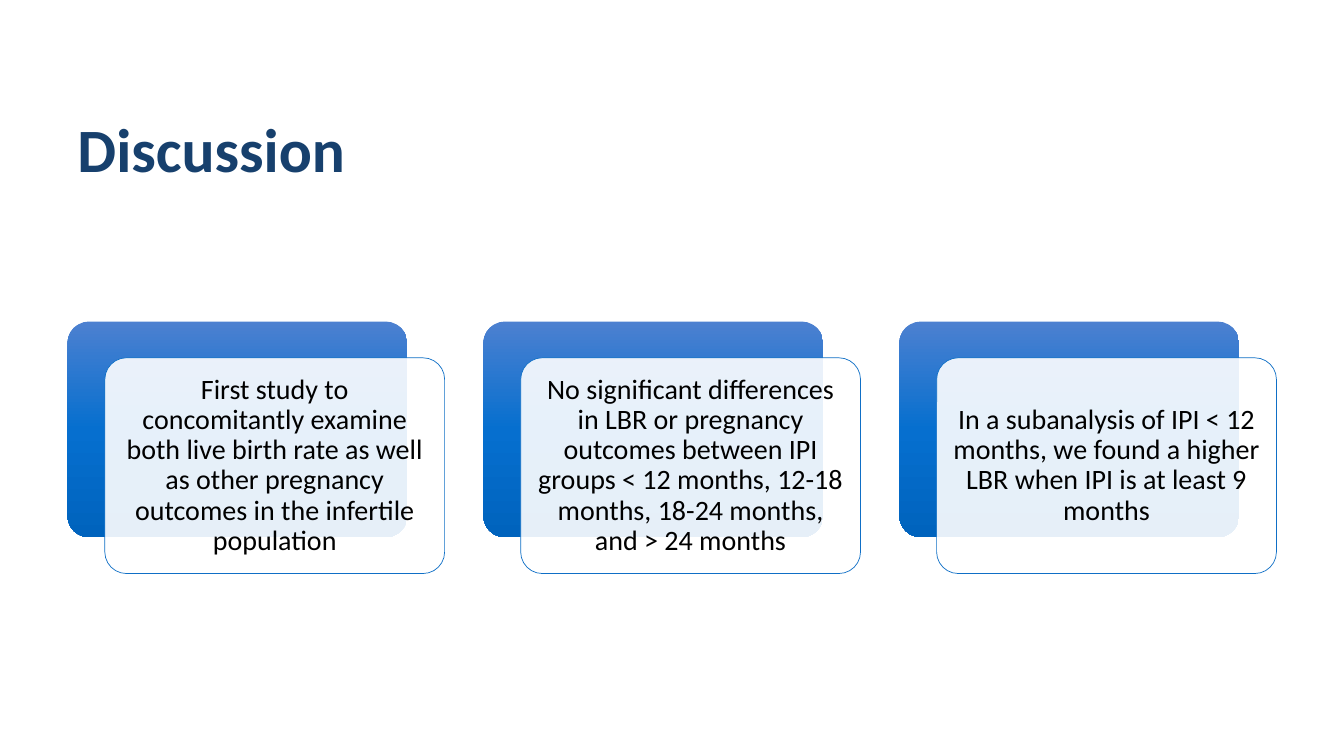
from copy import deepcopy
from dataclasses import dataclass

from lxml.etree import SubElement
from pptx import Presentation
from pptx.dml.color import RGBColor
from pptx.enum.shapes import MSO_SHAPE as Preset
from pptx.enum.text import MSO_ANCHOR as Anchor, PP_ALIGN as Align
from pptx.oxml.ns import qn
from pptx.util import Inches, Pt

NAVY = RGBColor(0x17, 0x40, 0x6D)
BLUE = RGBColor(0x0F, 0x6F, 0xC6)
BLACK = RGBColor(0, 0, 0)
WHITE = RGBColor(0xFF, 0xFF, 0xFF)
PANEL_STOPS = [
    (0, RGBColor(0x4C, 0x80, 0xD0)),
    (0.5, RGBColor(0x06, 0x6F, 0xCF)),
    (1, RGBColor(0x00, 0x63, 0xBD)),
]
FONT = "Calibri"

CARD_WIDTH, CARD_HEIGHT = 3.37, 2.14
FIRST_LEFT, PANEL_TOP = 0.67, 3.19
PITCH = 4.125
OFFSET_X, OFFSET_Y = 0.37, 0.36


@dataclass
class TextStyle:
    size: float
    color: RGBColor
    bold: bool
    align: Align
    inset_x: float
    inset_y: float


TITLE_STYLE = TextStyle(44, NAVY, True, Align.LEFT, 0.1, 0.05)
CARD_STYLE = TextStyle(20, BLACK, False, Align.CENTER, 0.08, 0.08)

FINDINGS = [
    "First study to concomitantly examine both live birth rate as well as "
    "other pregnancy outcomes in the infertile population",
    "No significant differences in LBR or pregnancy outcomes between IPI "
    "groups < 12 months, 12-18 months, 18-24 months, and > 24 months",
    "In a subanalysis of IPI < 12 months, we found a higher LBR when IPI "
    "is at least 9 months",
]


def write_text(box, text: str, style: TextStyle) -> None:
    frame = box.text_frame
    frame.word_wrap = True
    frame.vertical_anchor = Anchor.MIDDLE
    frame.margin_left = frame.margin_right = Inches(style.inset_x)
    frame.margin_top = frame.margin_bottom = Inches(style.inset_y)
    para = frame.paragraphs[0]
    para.alignment = style.align
    para.line_spacing = 0.9
    span = para.add_run()
    span.text = text
    span.font.name = FONT
    span.font.size = Pt(style.size)
    span.font.bold = style.bold
    span.font.color.rgb = style.color


def add_rounded(page, left: float, top: float):
    box = page.shapes.add_shape(Preset.ROUNDED_RECTANGLE, Inches(left), Inches(top),
                                Inches(CARD_WIDTH), Inches(CARD_HEIGHT))
    box.adjustments[0] = 0.1
    box.shadow.inherit = False
    return box


def add_panel(page, left: float, top: float) -> None:
    panel = add_rounded(page, left, top)
    panel.line.fill.background()
    panel.fill.gradient()
    panel.fill.gradient_angle = 270
    # The default gradient has two stops; add the middle one
    stop_list = next(panel._element.spPr.iter(qn("a:gsLst")))
    stop_list.append(deepcopy(stop_list[0]))
    for stop, (position, color) in zip(panel.fill.gradient_stops, PANEL_STOPS):
        stop.position = position
        stop.color.rgb = color


def add_card(page, left: float, top: float, text: str) -> None:
    card = add_rounded(page, left, top)
    card.fill.solid()
    card.fill.fore_color.rgb = WHITE
    white = card._element.spPr.find(qn("a:solidFill"))[0]
    SubElement(white, qn("a:alpha")).set("val", "90000")
    card.line.color.rgb = BLUE
    card.line.width = Pt(0.5)
    write_text(card, text, CARD_STYLE)


def main() -> None:
    deck = Presentation()
    deck.slide_width, deck.slide_height = Inches(13.33), Inches(7.5)
    page = deck.slides.add_slide(deck.slide_layouts[6])

    # Title
    title = page.shapes.add_textbox(Inches(0.67), Inches(0.91), Inches(12), Inches(1.2))
    write_text(title, "Discussion", TITLE_STYLE)

    # Findings: a blue panel behind each translucent card
    for index, finding in enumerate(FINDINGS):
        left = FIRST_LEFT + index * PITCH
        add_panel(page, left, PANEL_TOP)
        add_card(page, left + OFFSET_X, PANEL_TOP + OFFSET_Y, finding)

    deck.save("out.pptx")


if __name__ == "__main__":
    main()
